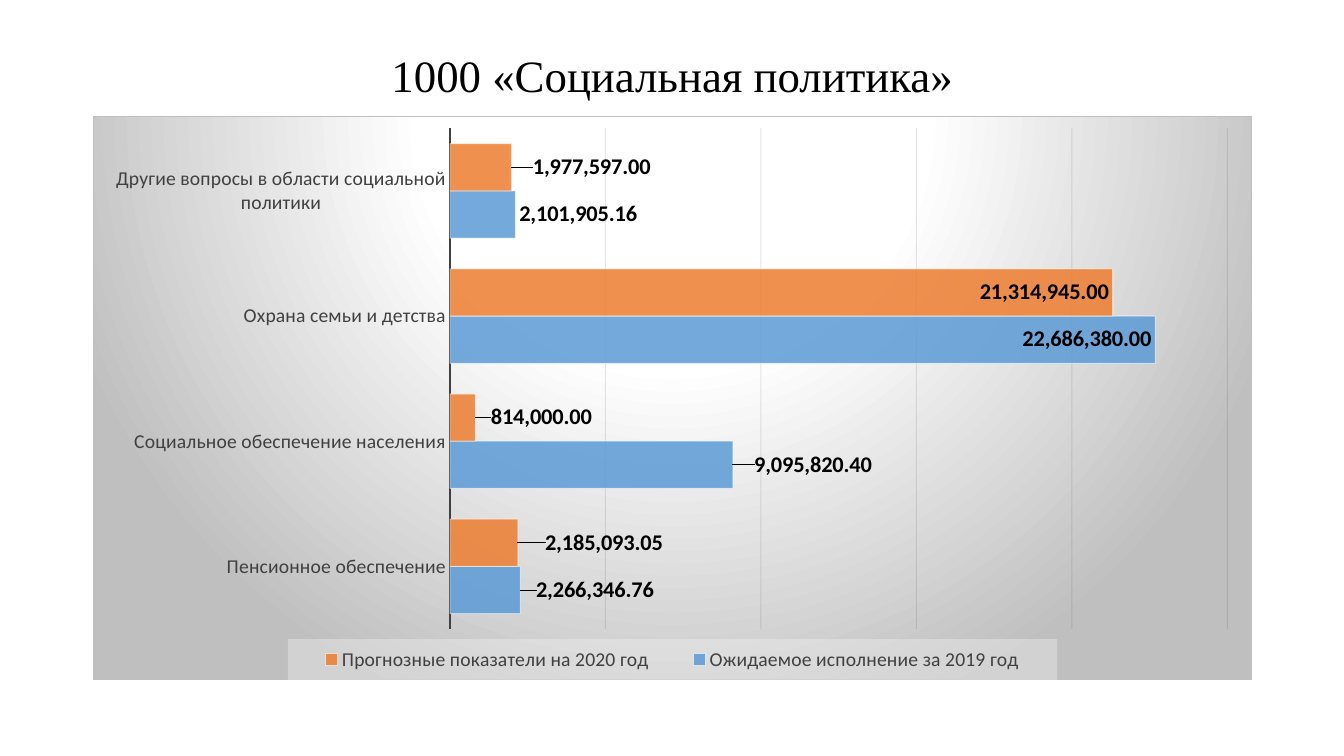
import pptx
import pptx.chart.data
import pptx.dml.color
import pptx.enum.chart
import pptx.enum.text
import pptx.oxml
import pptx.oxml.ns
import pptx.util

Inches = pptx.util.Inches
Pt = pptx.util.Pt
RGBColor = pptx.dml.color.RGBColor

BLACK = RGBColor(0x00, 0x00, 0x00)
WHITE = RGBColor(0xFF, 0xFF, 0xFF)
DARK_GREY = RGBColor(0x40, 0x40, 0x40)
GRID = RGBColor(0x0D, 0x0D, 0x0D)
BLUE = RGBColor(0x5B, 0x9B, 0xD5)
ORANGE = RGBColor(0xED, 0x7D, 0x31)

NUMBER_FORMAT = "#,##0.00"
NAMESPACES = " ".join(pptx.oxml.ns.nsdecls(p) for p in ("c", "a"))
CATEGORIES = [
    "Пенсионное обеспечение",
    "Социальное обеспечение населения",
    "Охрана семьи и детства",
    "Другие вопросы в области социальной политики",
]
# Name, colour, values, and the shift of each label placed beyond its bar
SERIES = [
    ("Ожидаемое исполнение за 2019 год", BLUE,
     [2266346.76, 9095820.40, 22686380, 2101905.16],
     {0: 0.01, 1: 0.015, 3: 0}),
    ("Прогнозные показатели на 2020 год", ORANGE,
     [2185093.05, 814000, 21314945, 1977597],
     {0: 0.02, 1: 0.01, 3: 0.015}),
]
BACKGROUND = f"""<c:spPr {NAMESPACES}>
  <a:gradFill><a:gsLst>
    <a:gs pos="0"><a:srgbClr val="FFFFFF"/></a:gs>
    <a:gs pos="39000"><a:srgbClr val="FFFFFF"/></a:gs>
    <a:gs pos="100000"><a:srgbClr val="BFBFBF"/></a:gs>
  </a:gsLst><a:path path="circle">
    <a:fillToRect l="50000" t="-80000" r="50000" b="180000"/>
  </a:path></a:gradFill>
  <a:ln w="9525"><a:solidFill><a:srgbClr val="BFBFBF"/></a:solidFill></a:ln>
</c:spPr>"""
LEGEND_FILL = f"""<c:spPr {NAMESPACES}><a:solidFill>
  <a:srgbClr val="F2F2F2"><a:alpha val="39000"/></a:srgbClr>
</a:solidFill></c:spPr>"""


def set_font(font, size, color, name="Calibri", bold=False):
    font.size, font.name, font.bold = Pt(size), name, bold
    font.color.rgb = color


def add_text(page, box, text, size, color, name):
    frame = page.shapes.add_textbox(*box).text_frame
    frame.word_wrap = True
    frame.vertical_anchor = pptx.enum.text.MSO_ANCHOR.MIDDLE
    para = frame.paragraphs[0]
    para.alignment = pptx.enum.text.PP_ALIGN.CENTER
    para.line_spacing = 0.9
    span = para.add_run()
    span.text = text
    set_font(span.font, size, color, name)


def set_alpha(color_parent, percent):
    """Make the solid colour directly below a fill or line parent translucent."""
    color = color_parent.xpath("./a:solidFill/a:srgbClr")[0]
    color.append(pptx.oxml.parse_xml(
        f'<a:alpha {NAMESPACES} val="{percent * 1000}"/>'))


def make_layout(**parts):
    """Build a manual layout from fractions of the chart area."""
    items = "".join(f'<c:{tag} val="{value}"/>' for tag, value in parts.items())
    return pptx.oxml.parse_xml(
        f"<c:layout {NAMESPACES}><c:manualLayout>{items}</c:manualLayout></c:layout>")


def style_axes(chart):
    category = chart.category_axis
    category.major_tick_mark = pptx.enum.chart.XL_TICK_MARK.NONE
    category.format.line.color.rgb = DARK_GREY
    category.format.line.width = Pt(1.5)
    set_font(category.tick_labels.font, 14, DARK_GREY)

    value = chart.value_axis
    value.visible = False
    value.minimum_scale, value.maximum_scale = 0, 25000000
    value.major_unit = 5000000
    value.has_major_gridlines = True
    line = value.major_gridlines.format.line
    line.color.rgb, line.width = GRID, Pt(0.75)
    set_alpha(value._element.xpath("./c:majorGridlines/c:spPr/a:ln")[0], 10)


def style_series(series, color, shifts):
    positions = pptx.enum.chart.XL_LABEL_POSITION
    series.format.fill.solid()
    series.format.fill.fore_color.rgb = color
    series.format.line.color.rgb = WHITE
    series.format.line.width = Pt(0.75)
    series.invert_if_negative = False
    set_alpha(series._element.xpath("./c:spPr")[0], 85)
    set_alpha(series._element.xpath("./c:spPr/a:ln")[0], 50)

    labels = series.data_labels
    labels.show_value = True
    labels.number_format = NUMBER_FORMAT
    labels.number_format_is_linked = False
    labels.position = positions.INSIDE_END
    set_font(labels.font, 16, BLACK, bold=True)
    for index, shift in shifts.items():
        label = series.points[index].data_label
        set_font(label.font, 16, BLACK, bold=True)
        label.position = positions.OUTSIDE_END
        if shift:
            idx = series._element.xpath(f".//c:dLbl/c:idx[@val='{index}']")[0]
            idx.addnext(make_layout(x=shift, y=0))


def style_legend(chart):
    chart.has_legend = True
    legend = chart.legend
    legend.position = pptx.enum.chart.XL_LEGEND_POSITION.BOTTOM
    legend.include_in_layout = False
    set_font(legend.font, 14, DARK_GREY)
    for old in legend._element.xpath("./c:layout"):
        legend._element.remove(old)
    overlay = legend._element.xpath("./c:overlay")[0]
    overlay.addprevious(make_layout(
        xMode="edge", yMode="edge", x=0.168, y=0.928, w=0.664, h=0.072))
    overlay.addnext(pptx.oxml.parse_xml(LEGEND_FILL))


def add_budget_chart(page, box):
    data = pptx.chart.data.CategoryChartData(number_format=NUMBER_FORMAT)
    data.categories = CATEGORIES
    for name, _, values, _ in SERIES:
        data.add_series(name, values)
    chart = page.shapes.add_chart(
        pptx.enum.chart.XL_CHART_TYPE.BAR_CLUSTERED, *box, data).chart
    chart.has_title = False
    set_font(chart.font, 10, BLACK)

    # Bars
    plot = chart.plots[0]
    plot.gap_width, plot.overlap = 65, 0
    plot.vary_by_categories = False
    for series, (_, color, _, shifts) in zip(plot.series, SERIES):
        style_series(series, color, shifts)
    style_axes(chart)
    style_legend(chart)

    # Plot area and background
    root = chart._chartSpace
    area = root.xpath("./c:chart/c:plotArea")[0]
    for old in area.xpath("./c:layout"):
        area.remove(old)
    area.insert(0, make_layout(
        layoutTarget="inner", xMode="edge", yMode="edge",
        x=0.308, y=0.021, w=0.671, h=0.889))
    root.xpath("./c:chart")[0].addnext(pptx.oxml.parse_xml(BACKGROUND))


def main():
    deck = pptx.Presentation()
    deck.slide_width, deck.slide_height = Inches(13.33), Inches(7.5)
    page = deck.slides.add_slide(deck.slide_layouts[6])
    left, width = Inches(0.92), Inches(11.5)
    add_text(page, (left, Inches(0.4), width, Inches(0.75)),
             "1000 «Социальная политика»", 32, BLACK, "Times New Roman")
    add_budget_chart(page, (left, Inches(1.15), width, Inches(5.6)))
    deck.save("out.pptx")


if __name__ == "__main__":
    main()
